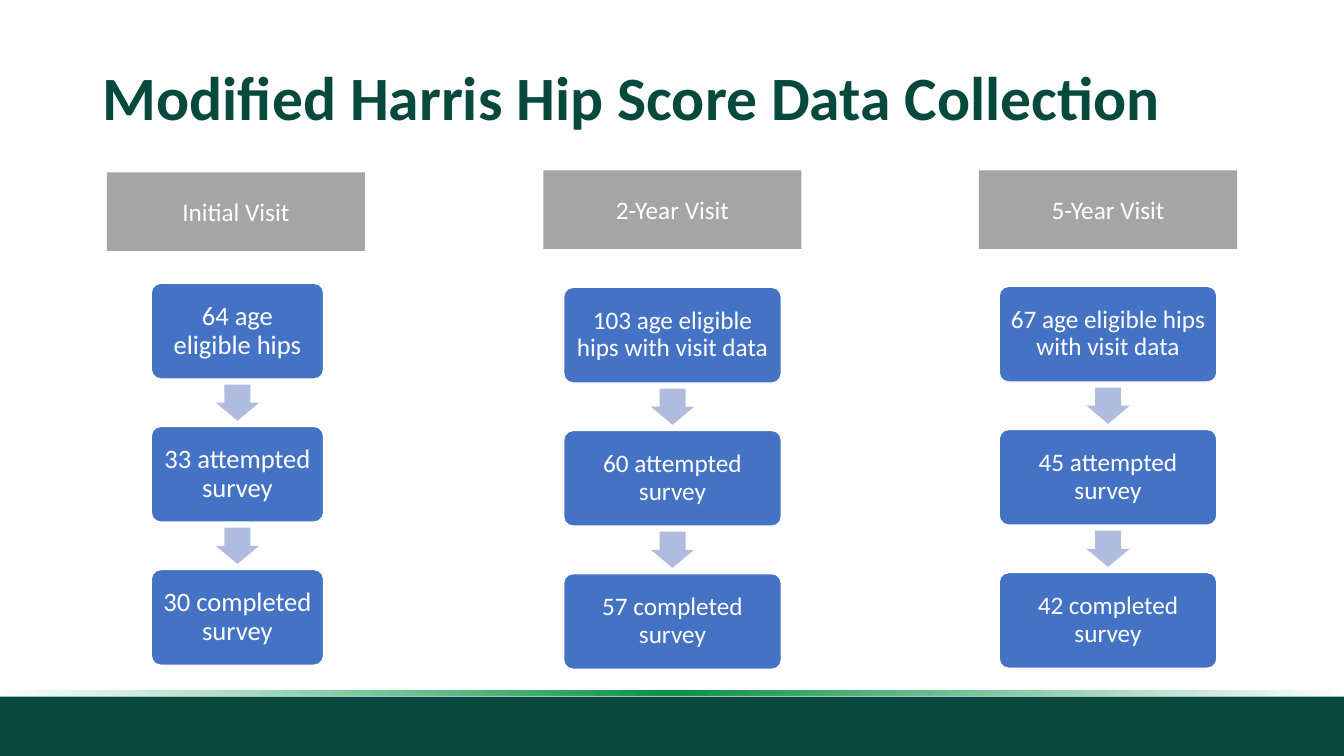
from pptx import Presentation
from pptx.dml.color import RGBColor
from pptx.enum.shapes import MSO_SHAPE
from pptx.enum.text import MSO_ANCHOR, MSO_AUTO_SIZE, PP_ALIGN
from pptx.oxml import parse_xml
from pptx.oxml.ns import nsdecls, qn
from pptx.util import Inches, Pt

RECTANGLE = MSO_SHAPE.RECTANGLE
ROUNDED = MSO_SHAPE.ROUNDED_RECTANGLE
ARROW = MSO_SHAPE.RIGHT_ARROW
MIDDLE = MSO_ANCHOR.MIDDLE
LEFT, CENTER = PP_ALIGN.LEFT, PP_ALIGN.CENTER
NO_FIT = MSO_AUTO_SIZE.NONE

DARK_GREEN = RGBColor(0x07, 0x49, 0x3C)
GRAY = RGBColor(0xA5, 0xA5, 0xA5)
BLUE = RGBColor(0x44, 0x72, 0xC4)
PALE_BLUE = RGBColor(0xB0, 0xBC, 0xDE)
WHITE = RGBColor(0xFF, 0xFF, 0xFF)

# Position in percent, colour and opacity in percent
GLOW_STOPS = [
    (0, RGBColor(0x0D, 0x9D, 0x4F), 0),
    (50, RGBColor(0x0C, 0x90, 0x49), 100),
    (100, RGBColor(0x0F, 0xAB, 0x56), 0),
]

HEADER_WIDTH, HEADER_HEIGHT = 2.56, 0.78
STEP_HEIGHT, STEP_PITCH = 0.95, 1.42
ARROW_LENGTH, ARROW_WIDTH, ARROW_OFFSET = 0.36, 0.43, 0.97

# Header, header left and top, step left, top and width, text size, inset, steps
VISITS = [
    ("Initial Visit", 1.06, 1.71, 1.5, 2.81, 1.71, 19, 0.08,
     ["64 age eligible hips", "33 attempted survey", "30 completed survey"]),
    ("2-Year Visit", 5.39, 1.69, 5.59, 2.85, 2.16, 18, 0.07,
     ["103 age eligible hips with visit data", "60 attempted survey",
      "57 completed survey"]),
    ("5-Year Visit", 9.71, 1.69, 9.91, 2.84, 2.16, 18, 0.07,
     ["67 age eligible hips with visit data", "45 attempted survey",
      "42 completed survey"]),
]


class SlideBuilder:
    font_name = "Calibri"

    def __init__(self, page):
        self.page = page

    def set_text(self, shape, text, size, color, align=CENTER, bold=False, spacing=1.0):
        frame = shape.text_frame
        frame.text = text
        frame.word_wrap = True
        frame.auto_size = NO_FIT
        frame.vertical_anchor = MIDDLE
        para = frame.paragraphs[0]
        para.alignment = align
        para.line_spacing = spacing
        font = para.runs[0].font
        font.name, font.size, font.bold = self.font_name, Pt(size), bold
        font.color.rgb = color

    def title(self, text, left, top, width, height):
        box = self.page.shapes.title
        box.left, box.top = Inches(left), Inches(top)
        box.width, box.height = Inches(width), Inches(height)
        self.set_text(box, text, 44, DARK_GREEN, LEFT, True, 0.9)

    def block(self, parent, kind, left, top, width, height, color):
        shape = parent.add_shape(kind, Inches(left), Inches(top),
                                 Inches(width), Inches(height))
        shape.shadow.inherit = False
        shape.fill.solid()
        shape.fill.fore_color.rgb = color
        shape.line.fill.background()
        return shape

    def glow(self, left, top, width, height):
        shape = self.block(self.page.shapes, RECTANGLE, left, top, width, height,
                           DARK_GREEN)
        stops = "".join(
            f'<a:gs pos="{place * 1000}"><a:srgbClr val="{color}">'
            f'<a:alpha val="{opacity * 1000}"/></a:srgbClr></a:gs>'
            for place, color, opacity in GLOW_STOPS)
        gradient = parse_xml(
            f'<a:gradFill {nsdecls("a")} rotWithShape="1"><a:gsLst>{stops}</a:gsLst>'
            '<a:lin ang="10800000" scaled="0"/></a:gradFill>')
        properties = shape._element.spPr
        properties.replace(properties.find(qn("a:solidFill")), gradient)

    def header(self, text, left, top):
        shape = self.block(self.page.shapes, RECTANGLE, left, top,
                           HEADER_WIDTH, HEADER_HEIGHT, GRAY)
        self.set_text(shape, text, 18, WHITE)

    def step(self, parent, text, left, top, width, size, inset):
        shape = self.block(parent, ROUNDED, left, top, width, STEP_HEIGHT, BLUE)
        shape.adjustments[0] = 0.1
        shape.line.color.rgb = WHITE
        shape.line.width = Pt(1)
        self.set_text(shape, text, size, WHITE, spacing=0.9)
        frame = shape.text_frame
        frame.margin_left = frame.margin_right = Inches(inset)
        frame.margin_top = frame.margin_bottom = Inches(inset)

    def arrow(self, parent, center, top):
        shape = self.block(parent, ARROW, center - ARROW_LENGTH / 2, top,
                           ARROW_LENGTH, ARROW_WIDTH, PALE_BLUE)
        shape.adjustments[0] = 0.6
        shape.adjustments[1] = 0.5
        shape.rotation = 90

    def flow(self, steps, left, top, width, size, inset):
        parent = self.page.shapes.add_group_shape().shapes
        for index, text in enumerate(steps):
            step_top = top + index * STEP_PITCH
            self.step(parent, text, left, step_top, width, size, inset)
            if index < len(steps) - 1:
                self.arrow(parent, left + width / 2, step_top + ARROW_OFFSET)


def main():
    deck = Presentation()
    deck.slide_width, deck.slide_height = Inches(13.33), Inches(7.5)
    builder = SlideBuilder(deck.slides.add_slide(deck.slide_layouts[5]))

    # Footer band with its glowing edge
    builder.block(builder.page.shapes, RECTANGLE, 0, 6.91, 13.33, 0.59, DARK_GREEN)
    builder.glow(0, 6.85, 13.33, 0.05)

    # Title
    builder.title("Modified Harris Hip Score Data Collection", 0.92, 0.4, 11.5, 1.19)

    # One header and flow per visit
    for name, header_left, header_top, left, top, width, size, inset, steps in VISITS:
        builder.header(name, header_left, header_top)
        builder.flow(steps, left, top, width, size, inset)

    deck.save("out.pptx")


if __name__ == "__main__":
    main()
